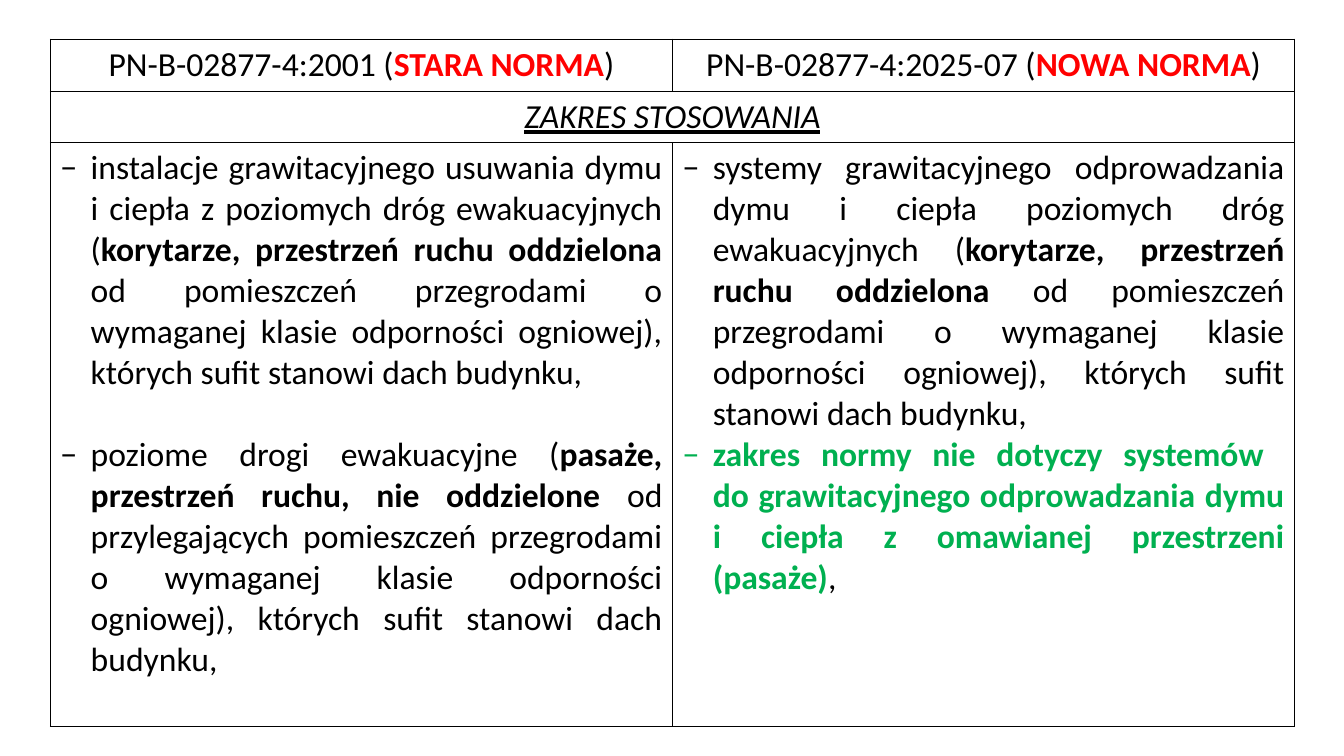
"""Build a slide comparing the scope of the old and new smoke venting standard."""
from lxml import etree
from pptx import Presentation
from pptx import util as u
from pptx.dml.color import RGBColor
from pptx.enum import text
from pptx.oxml import parse_xml
from pptx.oxml.ns import nsdecls, qn

BLACK = RGBColor(0x00, 0x00, 0x00)
RED = RGBColor(0xFF, 0x00, 0x00)
GREEN = RGBColor(0x00, 0xB0, 0x50)
BLANK_LINE = u.Pt(29.3)
CORRIDORS = "korytarze, przestrzeń ruchu oddzielona "
PARTITIONS = "pomieszczeń przegrodami o wymaganej klasie odporności ogniowej), których sufit stanowi dach budynku,"


def add_run(paragraph, wording, color=BLACK, bold=False):
    run = paragraph.add_run()
    run.text = wording
    run.font.name = "Calibri"
    run.font.size = u.Pt(24)
    run.font.color.rgb = color
    run.font.bold = bold
    return run


def format_bullet(paragraph):
    paragraph.alignment = text.PP_ALIGN.JUSTIFY
    properties = paragraph._p.get_or_add_pPr()
    properties.set("marL", str(u.Inches(0.3)))
    properties.set("indent", str(-u.Inches(0.3)))
    etree.SubElement(properties, qn("a:buFont")).set("typeface", "Calibri")
    etree.SubElement(properties, qn("a:buChar")).set("char", "−")


presentation = Presentation()
presentation.slide_width = u.Inches(13.33)
presentation.slide_height = u.Inches(7.5)
slide = presentation.slides.add_slide(presentation.slide_layouts[6])

row_heights = [0.52, 0.5, 5.79]
table = slide.shapes.add_table(
    3, 2, u.Inches(0.5), u.Inches(0.39), u.Inches(12.34), u.Inches(sum(row_heights))
).table
table.first_row = False
table.horz_banding = False
for column in table.columns:
    column.width = u.Inches(6.17)
for row, height in zip(table.rows, row_heights):
    row.height = u.Inches(height)

for cell in (cell for row in table.rows for cell in row.cells):
    properties = cell._tc.get_or_add_tcPr()
    for side in ("lnL", "lnR", "lnT", "lnB"):
        properties.append(parse_xml(
            f'<a:{side} {nsdecls("a")} w="{u.Pt(1)}"><a:solidFill>'
            f'<a:srgbClr val="{BLACK}"/></a:solidFill></a:{side}>'
        ))
    cell.fill.background()

headings = [("PN-B-02877-4:2001 (", "STARA NORMA"), ("PN-B-02877-4:2025-07 (", "NOWA NORMA")]
for cell, (standard, edition) in zip(table.rows[0].cells, headings):
    cell.vertical_anchor = text.MSO_ANCHOR.MIDDLE
    paragraph = cell.text_frame.paragraphs[0]
    paragraph.alignment = text.PP_ALIGN.CENTER
    add_run(paragraph, standard)
    add_run(paragraph, edition, RED, True)
    add_run(paragraph, ")")

scope_cell = table.cell(1, 0)
scope_cell.merge(table.cell(1, 1))
scope_cell.vertical_anchor = text.MSO_ANCHOR.MIDDLE
paragraph = scope_cell.text_frame.paragraphs[0]
paragraph.alignment = text.PP_ALIGN.CENTER
scope_run = add_run(paragraph, "ZAKRES STOSOWANIA")
scope_run.font.italic = True
scope_run.font.underline = True

old_frame = table.cell(2, 0).text_frame
new_frame = table.cell(2, 1).text_frame
scope_items = [
    (old_frame.paragraphs[0],
     "instalacje grawitacyjnego usuwania dymu i ciepła z poziomych dróg ewakuacyjnych (",
     CORRIDORS, "od " + PARTITIONS),
    (old_frame.add_paragraph(), "poziome drogi ewakuacyjne (",
     "pasaże, przestrzeń ruchu, nie oddzielone ", "od przylegających " + PARTITIONS),
    (new_frame.paragraphs[0],
     "systemy grawitacyjnego odprowadzania dymu i ciepła poziomych dróg ewakuacyjnych (",
     CORRIDORS, "od " + PARTITIONS),
]
for paragraph, opening, emphasis, ending in scope_items:
    format_bullet(paragraph)
    add_run(paragraph, opening)
    add_run(paragraph, emphasis, bold=True)
    add_run(paragraph, ending)
old_frame.paragraphs[0].space_after = BLANK_LINE

exclusion = new_frame.add_paragraph()
format_bullet(exclusion)
add_run(exclusion, "zakres normy nie dotyczy systemów ", GREEN, True)
exclusion.add_line_break()
add_run(exclusion, "do grawitacyjnego odprowadzania dymu i ciepła z omawianej przestrzeni (pasaże)", GREEN, True)
add_run(exclusion, ",")

presentation.save("out.pptx")
